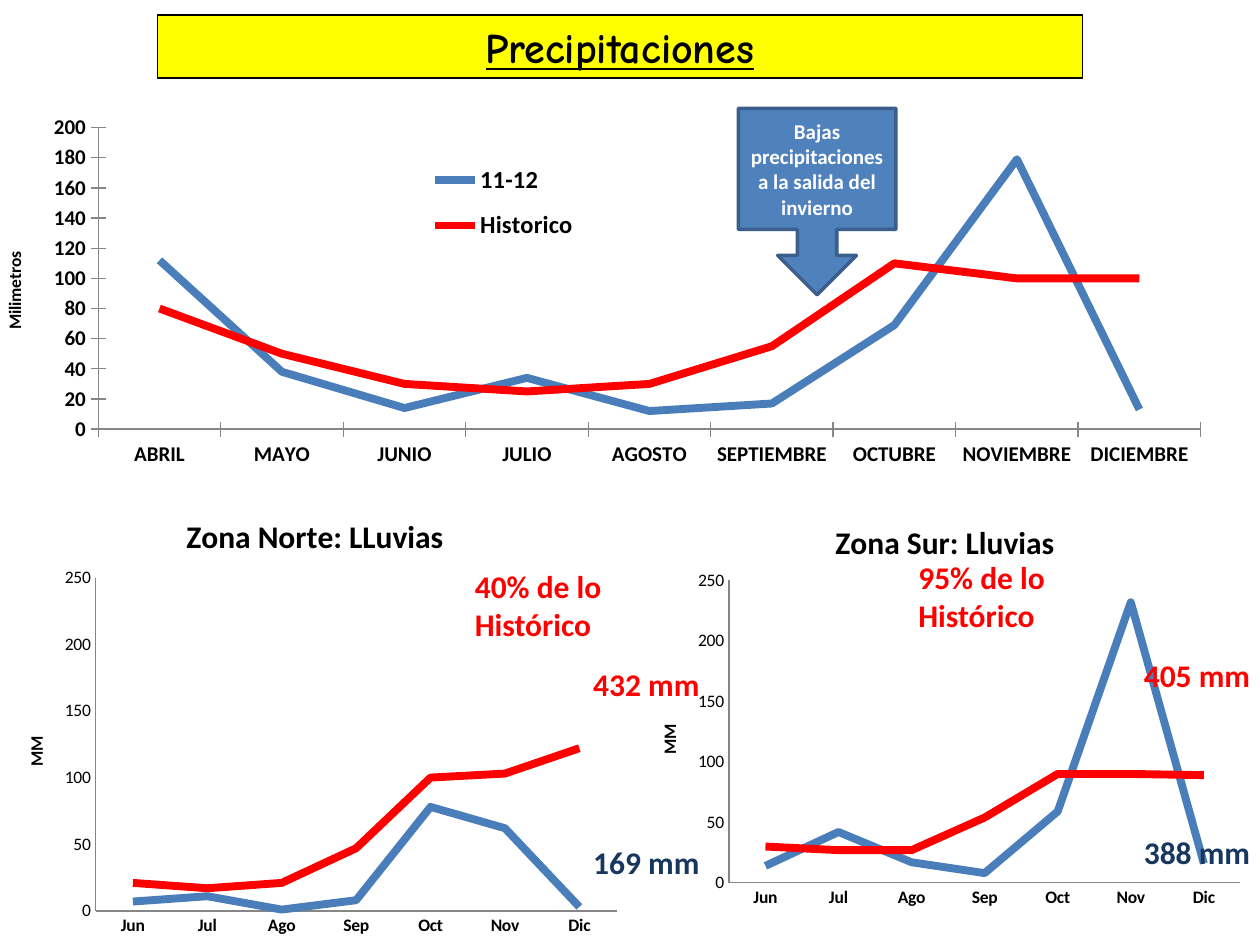
"""Build the rainfall slide: one overview chart, two zone charts and their notes."""
from typing import NamedTuple, Optional

from lxml.etree import SubElement
from pptx import Presentation
from pptx.chart.data import CategoryChartData
from pptx.dml.color import RGBColor
from pptx.enum.chart import XL_CHART_TYPE, XL_LEGEND_POSITION, XL_MARKER_STYLE, XL_TICK_MARK
from pptx.enum.shapes import MSO_SHAPE
from pptx.enum.text import MSO_ANCHOR, PP_ALIGN
from pptx.oxml.ns import qn
from pptx.util import Inches, Pt

BLACK = RGBColor(0x00, 0x00, 0x00)
WHITE = RGBColor(0xFF, 0xFF, 0xFF)
YELLOW = RGBColor(0xFF, 0xFF, 0x00)
RED = RGBColor(0xFF, 0x00, 0x00)
NAVY = RGBColor(0x17, 0x37, 0x5E)
BLUE = RGBColor(0x4F, 0x81, 0xBD)
BLUE_EDGE = RGBColor(0x3A, 0x5F, 0x8C)
SEASON_BLUE = RGBColor(0x4A, 0x7E, 0xBB)
AXIS_GRAY = RGBColor(0x86, 0x86, 0x86)

MONTHS = ["ABRIL", "MAYO", "JUNIO", "JULIO", "AGOSTO", "SEPTIEMBRE",
          "OCTUBRE", "NOVIEMBRE", "DICIEMBRE"]
SHORT_MONTHS = ["Jun", "Jul", "Ago", "Sep", "Oct", "Nov", "Dic"]


class Box(NamedTuple):
    left: float
    top: float
    width: float
    height: float


class Rainfall(NamedTuple):
    box: Box
    plot: Box
    months: list
    series: dict
    unit: str
    top_value: int
    step: int
    tick: XL_TICK_MARK
    axis_size: int
    bold_values: bool
    title: Optional[str] = None
    legend: Optional[Box] = None


class Note(NamedTuple):
    box: Box
    text: str
    color: RGBColor


class Panel(NamedTuple):
    box: Box
    preset: MSO_SHAPE
    text: str
    fill: RGBColor
    edge: RGBColor
    edge_width: float
    font: dict


CHARTS = [
    Rainfall(Box(0, 0.86, 10, 3), Box(0.078, 0.051, 0.875, 0.798), MONTHS,
             {"11-12": [112, 38, 14, 34, 12, 17, 69, 179, 13],
              "Historico": [80, 50, 30, 25, 30, 55, 110, 100, 100]},
             "Milimetros", 200, 20, XL_TICK_MARK.CROSS, 12, True,
             legend=Box(0.33, 0.11, 0.14, 0.28)),
    Rainfall(Box(0, 3.91, 5, 3.59), Box(0.152, 0.188, 0.827, 0.737), SHORT_MONTHS,
             {"Series 1": [7, 11, 1, 8, 78, 62, 3],
              "Series 2": [21, 17, 21, 47, 100, 103, 122]},
             "MM", 250, 50, XL_TICK_MARK.NONE, 10, False, "Zona Norte: LLuvias"),
    Rainfall(Box(5, 3.96, 5, 3.54), Box(0.157, 0.183, 0.812, 0.678), SHORT_MONTHS,
             {"Series 1": [14, 42, 17, 8, 59, 232, 16],
              "Series 2": [30, 27, 27, 54, 90, 90, 89]},
             "MM", 250, 50, XL_TICK_MARK.NONE, 10, False, "Zona Sur: Lluvias"),
]
HEADING = Panel(Box(1.25, 0.12, 7.34, 0.5), MSO_SHAPE.RECTANGLE, "Precipitaciones",
                YELLOW, BLACK, 0.75,
                {"name": "Comic Neue", "size": Pt(24), "bold": True, "underline": True})
CALLOUT = Panel(Box(5.86, 0.86, 1.25, 1.48), MSO_SHAPE.DOWN_ARROW_CALLOUT,
                "Bajas precipitaciones a la salida del invierno",
                BLUE, BLUE_EDGE, 2, {"name": "Calibri", "size": Pt(12), "bold": True})
NOTES = [
    Note(Box(3.67, 4.45, 1.25, 0.71), "40% de lo Histórico", RED),
    Note(Box(7.19, 4.38, 1.25, 0.71), "95% de lo Histórico", RED),
    Note(Box(4.61, 6.64, 1.09, 0.4), "169 mm", NAVY),
    Note(Box(4.61, 5.23, 1.09, 0.4), "432 mm", RED),
    Note(Box(8.98, 6.56, 1.09, 0.4), "388 mm", NAVY),
    Note(Box(8.98, 5.16, 1.09, 0.4), "405 mm", RED),
]


def apply(target, values: dict) -> None:
    for key, value in values.items():
        setattr(target, key, value)


def style_font(font, color: RGBColor, **values) -> None:
    apply(font, {"name": "Calibri", **values})
    font.color.rgb = color


def inches(box: Box) -> list:
    return [Inches(length) for length in box]


def place(parent, index: int, box: Box, inner: bool = False) -> None:
    for old in parent.findall(qn("c:layout")):
        parent.remove(old)
    layout = parent.makeelement(qn("c:layout"))
    parent.insert(index, layout)
    manual = SubElement(layout, qn("c:manualLayout"))
    settings = {"layoutTarget": "inner"} if inner else {}
    settings |= {"xMode": "edge", "yMode": "edge"}
    settings |= dict(zip("xywh", box))
    for tag, value in settings.items():
        SubElement(manual, qn(f"c:{tag}")).set("val", str(value))


def write_title(owner, text: str, size: int) -> None:
    frame = owner.text_frame
    frame.text = text
    style_font(frame.paragraphs[0].runs[0].font, BLACK, size=Pt(size), bold=True)


def draw_chart(slide, rain: Rainfall) -> None:
    data = CategoryChartData(number_format="#,##0")
    data.categories = rain.months
    for name, values in rain.series.items():
        data.add_series(name, values)
    chart = slide.shapes.add_chart(XL_CHART_TYPE.LINE, *inches(rain.box), data).chart
    style_font(chart.font, BLACK, size=Pt(10))
    apply(chart, {"has_title": bool(rain.title), "has_legend": bool(rain.legend)})
    if rain.title:
        write_title(chart.chart_title, rain.title, 18)
    if rain.legend:
        apply(chart.legend, {"position": XL_LEGEND_POSITION.RIGHT, "include_in_layout": False})
        style_font(chart.legend.font, BLACK, size=Pt(14), bold=True)
        place(chart.legend._element, 1, rain.legend)
    place(chart._chartSpace.chart.plotArea, 0, rain.plot, inner=True)

    for axis, bold in ((chart.category_axis, True), (chart.value_axis, rain.bold_values)):
        apply(axis, {"has_major_gridlines": False, "major_tick_mark": rain.tick,
                     "minor_tick_mark": XL_TICK_MARK.NONE})
        style_font(axis.tick_labels.font, BLACK, size=Pt(rain.axis_size), bold=bold)
        axis.format.line.color.rgb = AXIS_GRAY
    apply(chart.value_axis, {"minimum_scale": 0, "maximum_scale": rain.top_value,
                             "major_unit": rain.step})
    apply(chart.value_axis.tick_labels,
          {"number_format": "#,##0", "number_format_is_linked": False})
    write_title(chart.value_axis.axis_title, rain.unit, 10)

    chart.plots[0].vary_by_categories = False
    for series, color in zip(chart.plots[0].series, (SEASON_BLUE, RED)):
        series.smooth = False
        series.marker.style = XL_MARKER_STYLE.NONE
        series.format.line.width = Pt(4.5)
        series.format.line.color.rgb = color


def draw_panel(slide, panel: Panel, text_color: RGBColor) -> None:
    shape = slide.shapes.add_shape(panel.preset, *inches(panel.box))
    shape.shadow.inherit = False
    shape.fill.solid()
    shape.fill.fore_color.rgb = panel.fill
    shape.line.color.rgb = panel.edge
    shape.line.width = Pt(panel.edge_width)
    frame = shape.text_frame
    apply(frame, {"text": panel.text, "word_wrap": True, "vertical_anchor": MSO_ANCHOR.MIDDLE})
    frame.paragraphs[0].alignment = PP_ALIGN.CENTER
    style_font(frame.paragraphs[0].runs[0].font, text_color, **panel.font)


def draw_note(slide, note: Note) -> None:
    frame = slide.shapes.add_textbox(*inches(note.box)).text_frame
    apply(frame, {"text": note.text, "word_wrap": True})
    style_font(frame.paragraphs[0].runs[0].font, note.color, size=Pt(18), bold=True)


def main() -> None:
    deck = Presentation()
    apply(deck, {"slide_width": Inches(10), "slide_height": Inches(7.5)})
    slide = deck.slides.add_slide(deck.slide_layouts[6])
    overview, *zones = CHARTS
    draw_panel(slide, HEADING, BLACK)
    draw_chart(slide, overview)
    draw_panel(slide, CALLOUT, WHITE)
    for zone in zones:
        draw_chart(slide, zone)
    for note in NOTES:
        draw_note(slide, note)
    deck.save("out.pptx")


if __name__ == "__main__":
    main()
